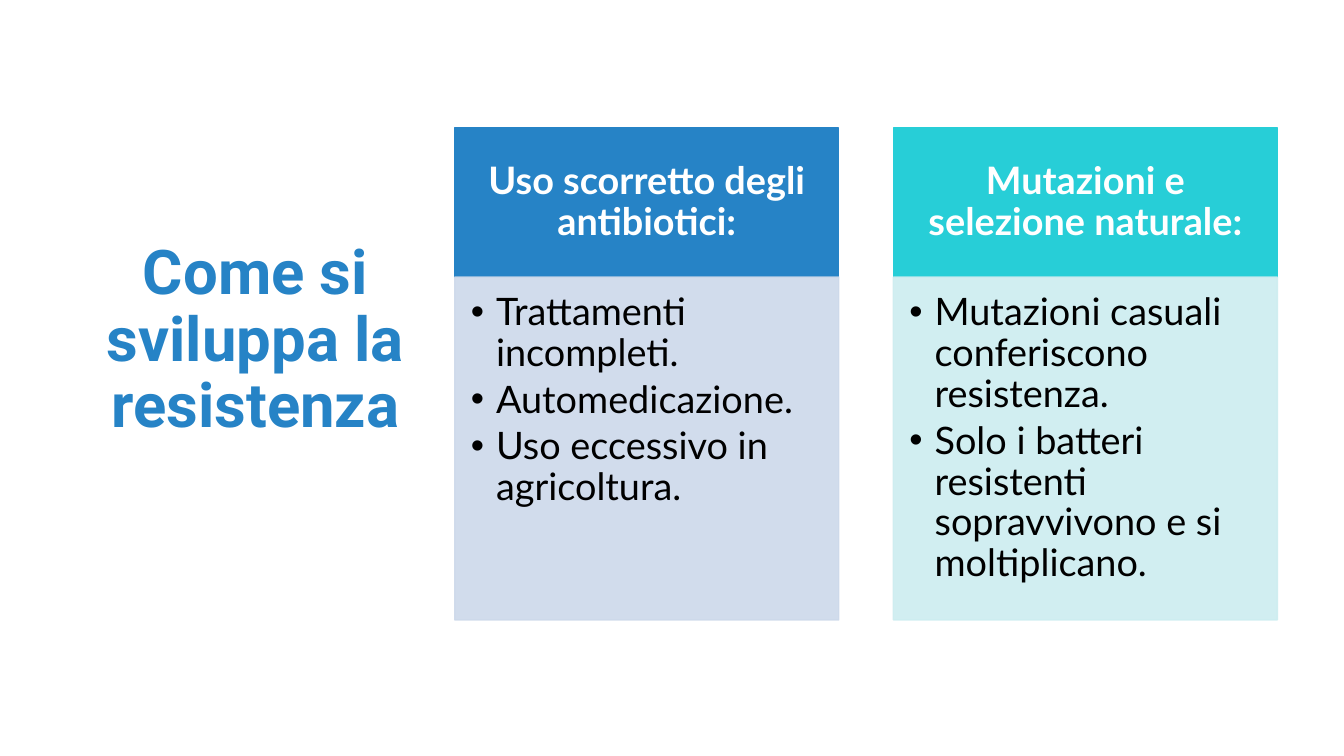
import pptx
import pptx.dml.color
import pptx.enum.shapes
import pptx.enum.text
import pptx.oxml
import pptx.oxml.ns
import pptx.util

Inches = pptx.util.Inches
Pt = pptx.util.Pt
ALIGN = pptx.enum.text.PP_ALIGN
ANCHOR = pptx.enum.text.MSO_ANCHOR

CAUSES = [
    ("Uso scorretto degli antibiotici:", "2683C6", "CDD9EA",
     ["Trattamenti incompleti.", "Automedicazione.", "Uso eccessivo in agricoltura."]),
    ("Mutazioni e selezione naturale:", "27CED7", "CDEDF0",
     ["Mutazioni casuali conferiscono resistenza.",
      "Solo i batteri resistenti sopravvivono e si moltiplicano."]),
]


def rgb(value):
    return pptx.dml.color.RGBColor.from_string(value)


def set_frame(frame, anchor, insets):
    frame.word_wrap = True
    frame.auto_size = pptx.enum.text.MSO_AUTO_SIZE.NONE
    frame.vertical_anchor = anchor
    (frame.margin_left, frame.margin_top,
     frame.margin_right, frame.margin_bottom) = [Inches(inset) for inset in insets]


def write(paragraph, text, font, size, color, bold, align):
    paragraph.alignment = align
    paragraph.line_spacing = 0.9
    run = paragraph.add_run()
    run.text = text
    run.font.name = font
    run.font.size = Pt(size)
    run.font.bold = bold
    run.font.color.rgb = rgb(color)


def add_bullet(paragraph):
    properties = paragraph._p.get_or_add_pPr()
    properties.set("marL", str(Inches(0.25)))
    properties.set("indent", str(Inches(-0.25)))
    namespace = pptx.oxml.ns.nsdecls("a")
    properties.append(pptx.oxml.parse_xml(f'<a:buFont {namespace} typeface="Arial"/>'))
    properties.append(pptx.oxml.parse_xml(f'<a:buChar {namespace} char="•"/>'))


def add_panel(slide, left, top, width, height, color, opacity=100):
    panel = slide.shapes.add_shape(
        pptx.enum.shapes.MSO_SHAPE.RECTANGLE,
        Inches(left), Inches(top), Inches(width), Inches(height))
    panel.shadow.inherit = False
    panel.fill.solid()
    panel.fill.fore_color.rgb = rgb(color)
    panel.line.color.rgb = rgb(color)
    panel.line.width = Pt(1)
    if opacity < 100:
        for tint in panel._element.spPr.iter(pptx.oxml.ns.qn("a:srgbClr")):
            tint.append(pptx.oxml.parse_xml(
                f'<a:alpha {pptx.oxml.ns.nsdecls("a")} val="{opacity * 1000}"/>'))
    return panel


def add_title(slide, left, top, width, height):
    title = slide.shapes.title
    title.left, title.top = Inches(left), Inches(top)
    title.width, title.height = Inches(width), Inches(height)
    set_frame(title.text_frame, ANCHOR.MIDDLE, (0.1, 0.05, 0.1, 0.71))
    write(title.text_frame.paragraphs[0], "Come si sviluppa la resistenza",
          "Roboto", 44, "2683C6", True, ALIGN.CENTER)


def add_cause(slide, left, top, width, height, cause):
    heading, heading_color, body_color, points = cause
    heading_height = 1.48
    header = add_panel(slide, left, top, width, heading_height, heading_color)
    set_frame(header.text_frame, ANCHOR.MIDDLE, (0.21, 0.12, 0.21, 0.12))
    write(header.text_frame.paragraphs[0], heading, "Lato", 27, "FFFFFF", True, ALIGN.CENTER)

    body = add_panel(slide, left, top + heading_height, width,
                     height - heading_height, body_color, 90)
    set_frame(body.text_frame, ANCHOR.TOP, (0.16, 0.16, 0.21, 0.24))
    for index, point in enumerate(points):
        paragraph = body.text_frame.add_paragraph() if index else body.text_frame.paragraphs[0]
        paragraph.level = 1
        paragraph.space_after = Pt(4)
        write(paragraph, point, "Lato", 27, "000000", False, ALIGN.LEFT)
        add_bullet(paragraph)


def main():
    presentation = pptx.Presentation()
    presentation.slide_width = Inches(13.33)
    presentation.slide_height = Inches(7.5)
    slide = presentation.slides.add_slide(presentation.slide_layouts[5])
    slide.background.fill.solid()
    slide.background.fill.fore_color.rgb = rgb("FFFFFF")
    add_title(slide, 0.92, 0.67, 3.23, 6.09)
    for column, cause in enumerate(CAUSES):
        add_cause(slide, 4.51 + column * 4.35, 1.27, 3.81, 4.88, cause)
    presentation.save("out.pptx")


if __name__ == "__main__":
    main()
